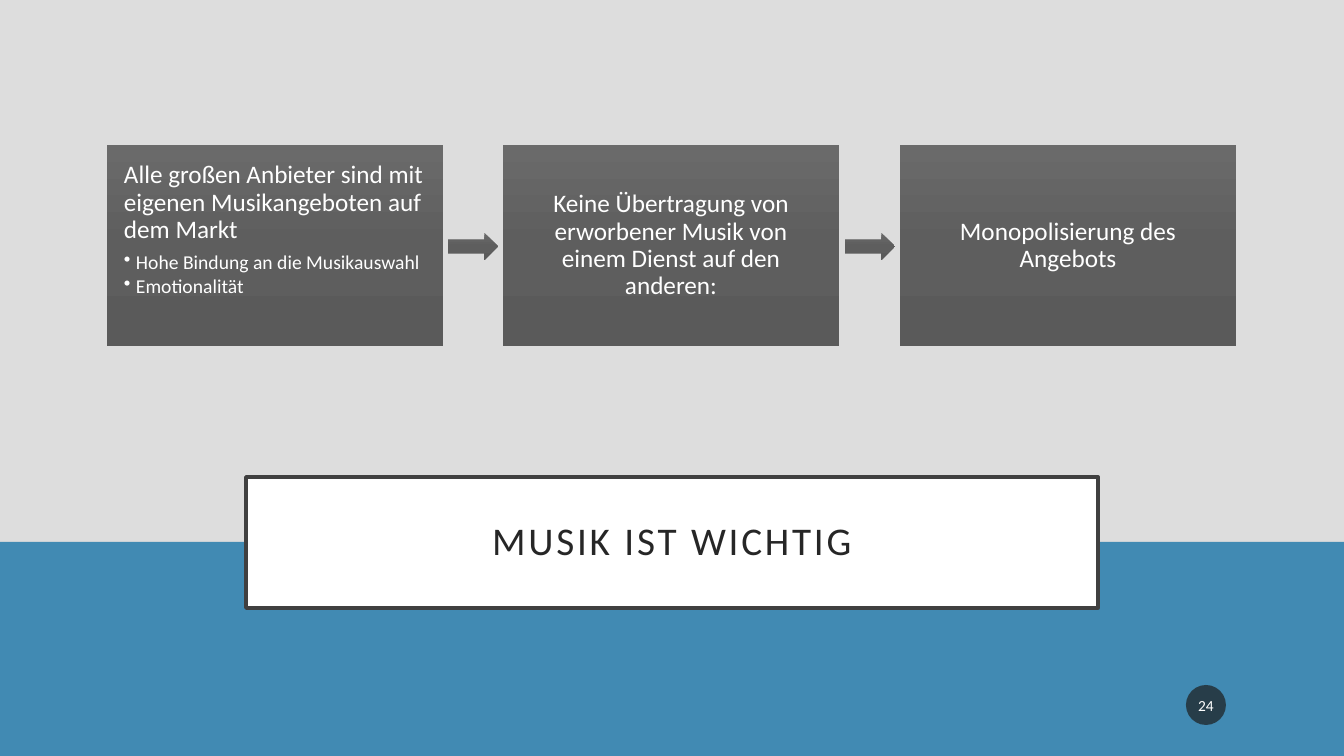
import copy

from pptx import Presentation
from pptx import util as u
from pptx.dml import color
from pptx.enum import shapes, text
from pptx.oxml import parse_xml
from pptx.oxml.ns import nsdecls, qn

SCALE = 914400 / 100.8
FONT = "Calibri"
WHITE = "FFFFFF"
GRAYS = [(0, "6A6A6A"), (0.5, "5E5E5E"), (1, "5A5A5A")]
STEPS = [
    ("Alle großen Anbieter sind mit eigenen Musikangeboten auf dem Markt",
     ["Hohe Bindung an die Musikauswahl", "Emotionalität"]),
    ("Keine Übertragung von erworbener Musik von einem Dienst auf den anderen:", []),
    ("Monopolisierung des Angebots", []),
]


def px(n):
    """Turn pixels into EMU."""
    return u.Emu(round(n * SCALE))


def rgb(code):
    """Turn a hex string into a colour."""
    return color.RGBColor.from_string(code)


def add_box(s, kind, x, y, w, h, fill=None):
    """Add a shape without line or shadow, filled plainly or with the gray gradient."""
    sp = s.shapes.add_shape(kind, px(x), px(y), px(w), px(h))
    sp.shadow.inherit = False
    sp.line.fill.background()
    if fill:
        sp.fill.solid()
        sp.fill.fore_color.rgb = rgb(fill)
        return sp
    sp.fill.gradient()
    sp.fill.gradient_angle = 270
    stops = sp._element.spPr.find(qn("a:gradFill")).find(qn("a:gsLst"))
    stops.append(copy.deepcopy(stops[-1]))
    for stop, (position, code) in zip(sp.fill.gradient_stops, GRAYS):
        stop.position = position
        stop.color.rgb = rgb(code)
    return sp


def set_frame(sp, anchor, inset_x, inset_y):
    """Set wrapping, anchor and insets of a shape's text."""
    tf = sp.text_frame
    tf.word_wrap = True
    tf.vertical_anchor = anchor
    tf.margin_left = tf.margin_right = px(inset_x)
    tf.margin_top = tf.margin_bottom = px(inset_y)
    return tf


def write(p, words, size, code=WHITE, align=text.PP_ALIGN.CENTER, after=0):
    """Write one run into a paragraph."""
    p.alignment = align
    p.line_spacing = 0.9
    p.space_after = u.Pt(after)
    r = p.add_run()
    r.text = words
    r.font.name = FONT
    r.font.size = u.Pt(size)
    r.font.color.rgb = rgb(code)
    return r


def add_step(s, x, y, w, h, heading, bullets):
    """Add one step with its heading and bullets."""
    sp = add_box(s, shapes.MSO_SHAPE.RECTANGLE, x, y, w, h)
    anchor = text.MSO_ANCHOR.TOP if bullets else text.MSO_ANCHOR.MIDDLE
    align = text.PP_ALIGN.LEFT if bullets else text.PP_ALIGN.CENTER
    tf = set_frame(sp, anchor, 17, 17)
    write(tf.paragraphs[0], heading, 18, align=align, after=6.3)
    for bullet in bullets:
        p = tf.add_paragraph()
        p.level = 1
        write(p, bullet, 14, align=align, after=2.1)
        pPr = p._p.get_or_add_pPr()
        pPr.set("marL", str(px(12)))
        pPr.set("indent", str(-px(12)))
        pPr.append(parse_xml(f'<a:buChar {nsdecls("a")} char="•"/>'))


def add_process(s, x, y, w, h):
    """Add the row of steps with arrows centred in the gaps."""
    step_w, arrow_w, arrow_h = 336, 50, 27
    pitch = (w - step_w) / (len(STEPS) - 1)
    for i, (heading, bullets) in enumerate(STEPS):
        left = x + round(i * pitch)
        if i:
            gap = pitch - step_w
            add_box(s, shapes.MSO_SHAPE.RIGHT_ARROW, left - round((gap + arrow_w) / 2),
                    y + (h - arrow_h) // 2 + 1, arrow_w, arrow_h)
        add_step(s, left, y, step_w, h, heading, bullets)


def add_title(s, x, y, w, h):
    """Add the framed title."""
    sp = add_box(s, shapes.MSO_SHAPE.RECTANGLE, x, y, w, h, WHITE)
    sp.line.color.rgb = rgb("404040")
    sp.line.width = u.Pt(2.5)
    tf = set_frame(sp, text.MSO_ANCHOR.MIDDLE, 20, 20)
    r = write(tf.paragraphs[0], "MUSIK IST WICHTIG", 28, "262626")
    r.font._element.set("spc", "200")


def add_page_number(s, x, y, d):
    """Add the page number on a translucent disc."""
    sp = add_box(s, shapes.MSO_SHAPE.OVAL, x, y, d, d, "1D1D1D")
    tone = sp._element.spPr.find(qn("a:solidFill"))[0]
    tone.append(parse_xml(f'<a:alpha {nsdecls("a")} val="70000"/>'))
    tf = set_frame(sp, text.MSO_ANCHOR.MIDDLE, 2, 5)
    write(tf.paragraphs[0], "24", 11).font.bold = False
    tf.paragraphs[0].line_spacing = 1.0


def main():
    """Build the slide and save it."""
    prs = Presentation()
    prs.slide_width, prs.slide_height = px(1344), px(756)
    s = prs.slides.add_slide(prs.slide_layouts[6])
    s.background.fill.solid()
    s.background.fill.fore_color.rgb = rgb("DDDDDD")
    add_box(s, shapes.MSO_SHAPE.RECTANGLE, 0, 542, 1344, 214, "418AB3")
    add_title(s, 246, 477, 852, 131)
    add_process(s, 107, 145, 1129, 201)
    add_page_number(s, 1186, 685, 40)
    prs.save("out.pptx")


if __name__ == "__main__":
    main()
